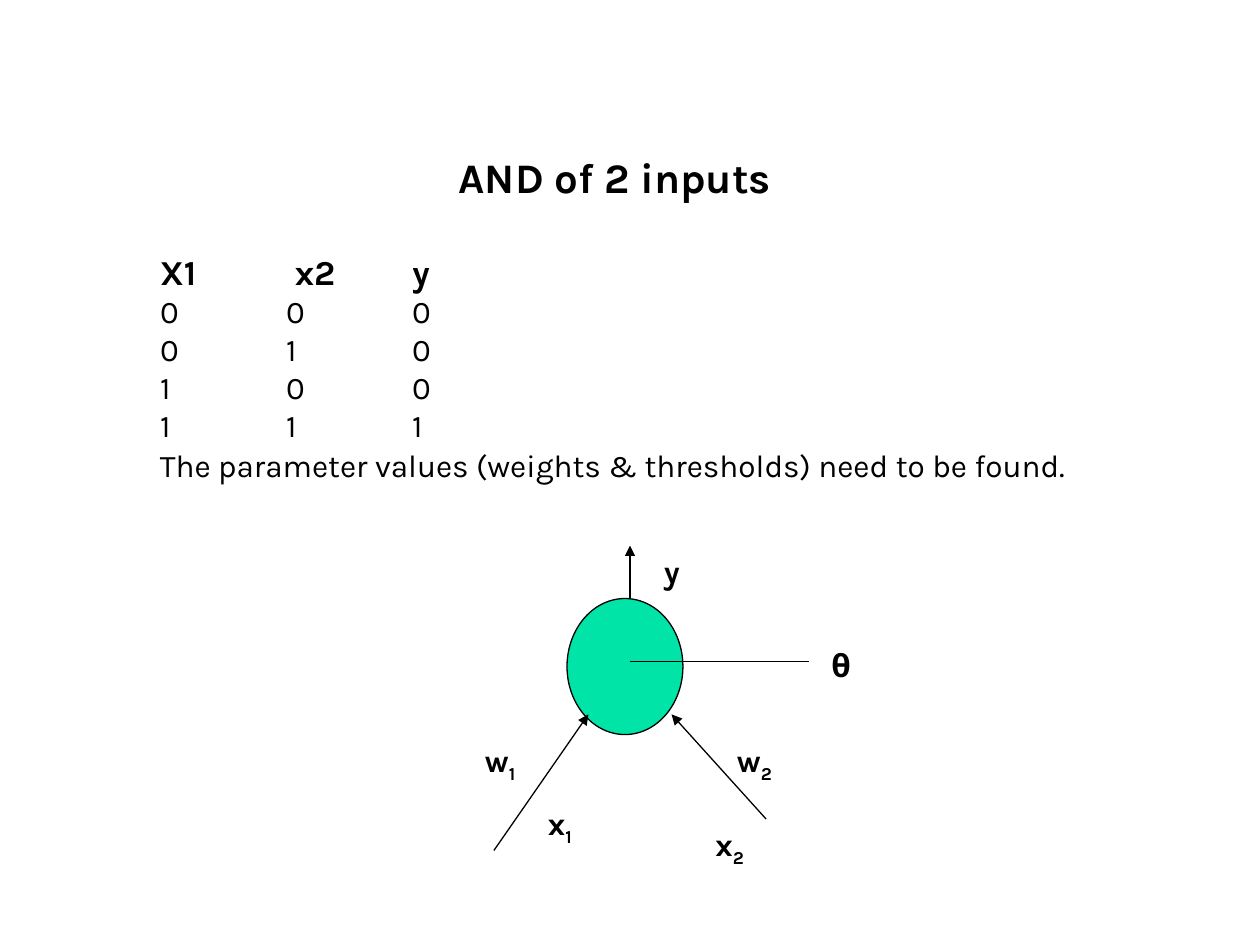
from pptx import Presentation
from pptx.dml.color import RGBColor
from pptx.enum import shapes, text
from pptx.oxml import parse_xml
from pptx.oxml.ns import nsdecls
from pptx.util import Inches, Pt

FONT = "Karla"
BLACK = "000000"
GREEN = "00E4A8"


def rgb(value):
    return RGBColor.from_string(value)


def write(tf, content, size=18, bold=False, align=text.PP_ALIGN.LEFT, sub="",
          margins=(0.1, 0.05), wrap=True):
    """Fill a text frame with one paragraph and an optional subscript."""
    tf.word_wrap = wrap
    tf.auto_size = text.MSO_AUTO_SIZE.NONE
    tf.vertical_anchor = text.MSO_ANCHOR.TOP
    tf.margin_left = tf.margin_right = Inches(margins[0])
    tf.margin_top = tf.margin_bottom = Inches(margins[1])
    p = tf.paragraphs[0]
    p.alignment = align
    for part, baseline in ((content, None), (sub, "-25000")):
        if not part:
            continue
        r = p.add_run()
        r.text = part
        r.font.name, r.font.size, r.font.bold = FONT, Pt(size), bold
        r.font.color.rgb = rgb(BLACK)
        if baseline:
            r._r.get_or_add_rPr().set("baseline", baseline)


def add_text(slide, left, top, width, height, content, **fmt):
    sp = slide.shapes.add_textbox(*map(Inches, (left, top, width, height)))
    write(sp.text_frame, content, **fmt)


def add_line(slide, x1, y1, x2, y2, arrow=False):
    line = slide.shapes.add_connector(shapes.MSO_CONNECTOR.STRAIGHT,
                                      *map(Inches, (x1, y1, x2, y2)))
    line.line.color.rgb = rgb(BLACK)
    line.line.width = Pt(0.75)
    if arrow:
        line.line._get_or_add_ln().append(
            parse_xml(f'<a:tailEnd {nsdecls("a")} type="triangle"/>'))
    line._element.spPr.append(parse_xml(f'<a:effectLst {nsdecls("a")}/>'))


def add_title(slide, left, top, width, height):
    title = slide.shapes.title
    title.left, title.top, title.width, title.height = map(
        Inches, (left, top, width, height))
    write(title.text_frame, "AND of 2 inputs", size=24, bold=True,
          align=text.PP_ALIGN.CENTER)


def add_truth_table(slide, left, top, width, header_height, row_height):
    rows = [("X1", "x2", "y")] + [(a, b, a & b) for a in (0, 1) for b in (0, 1)]
    height = header_height + row_height * (len(rows) - 1)
    table = slide.shapes.add_table(len(rows), 3, *map(
        Inches, (left, top, width, height))).table
    table.first_row = table.horz_banding = False
    for i, row in enumerate(rows):
        header = i == 0
        table.rows[i].height = Inches(header_height if header else row_height)
        for j, value in enumerate(row):
            cell = table.cell(i, j)
            cell.fill.background()
            cell.margin_left = Inches(0.07 if value == "x2" else 0)
            cell.margin_right = cell.margin_top = cell.margin_bottom = 0
            write_cell(cell, str(value), 20 if header else 18, header)


def write_cell(cell, content, size, bold):
    r = cell.text_frame.paragraphs[0].add_run()
    r.text = content
    r.font.name, r.font.size, r.font.bold = FONT, Pt(size), bold
    r.font.color.rgb = rgb(BLACK)


def add_neuron(slide, left, top):
    """Draw the unit with its inputs, weights, threshold and output."""
    body = slide.shapes.add_shape(shapes.MSO_SHAPE.OVAL, *map(
        Inches, (left + 0.75, top + 0.42, 0.92, 1.08)))
    body.shadow.inherit = False
    body.fill.solid()
    body.fill.fore_color.rgb = rgb(GREEN)
    body.line.color.rgb = rgb(BLACK)
    body.line.width = Pt(0.75)

    for x1, y1, x2, y2, arrow in (
            (0.17, 2.42, 0.92, 1.34, True),    # first input
            (2.33, 2.17, 1.58, 1.34, True),    # second input
            (1.25, 0.42, 1.25, 0, True),       # output
            (1.25, 0.92, 2.67, 0.92, False)):  # threshold
        add_line(slide, left + x1, top + y1, left + x2, top + y2, arrow)

    for x, y, width, name, sub in (
            (1.42, 0, 0.34, "y", ""),
            (0, 1.5, 0.49, "w", "1"),
            (2, 1.5, 0.49, "w", "2"),
            (0.5, 2, 0.43, "x", "1"),
            (1.83, 2.17, 0.43, "x", "2"),
            (2.75, 0.75, 0.34, "θ", "")):
        add_text(slide, left + x, top + y, width, 0.4, name, sub=sub,
                 bold=True, wrap=False)


def main():
    prs = Presentation()
    prs.slide_width, prs.slide_height = Inches(10), Inches(7.5)
    slide = prs.slides.add_slide(prs.slide_layouts[5])
    add_title(slide, 1.17, 1.15, 7.42, 0.5)
    add_truth_table(slide, 1.27, 2.01, 3, 0.33, 0.3)
    add_text(slide, 1.17, 3.49, 7.42, 0.4,
             "The parameter values (weights & thresholds) need to be found.")
    add_neuron(slide, 3.75, 4.33)
    prs.save("out.pptx")


if __name__ == "__main__":
    main()
